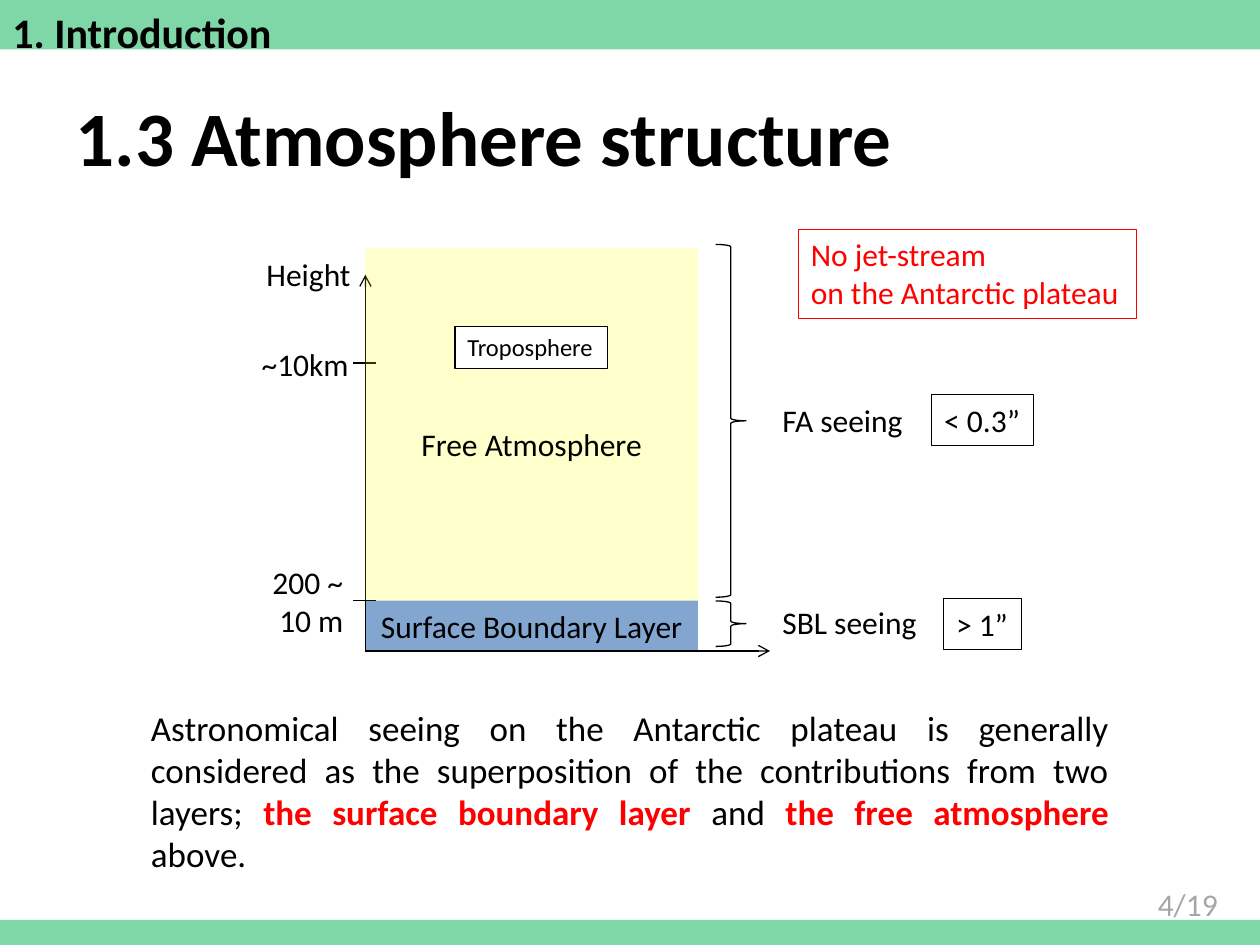
from lxml import etree
from pptx import Presentation
from pptx.dml.color import RGBColor
from pptx.enum import shapes, text
from pptx.oxml import ns
from pptx.util import Pt

COLORS = {"black": "000000", "red": "FF0000", "white": "FFFFFF", "gray": "A6A6A6",
          "green": "00B050", "blue": "4F81BD", "yellow": "FFFF00"}
FONT = "Calibri"
LEFT, CENTER = text.PP_ALIGN.LEFT, text.PP_ALIGN.CENTER
TOP, MIDDLE = text.MSO_ANCHOR.TOP, text.MSO_ANCHOR.MIDDLE


def color(name):
    return RGBColor.from_string(COLORS[name])


def write(shape, content, size=18, fill="black", bold=False, align=LEFT, anchor=TOP, wrap=False):
    frame = shape.text_frame
    frame.word_wrap = wrap
    frame.vertical_anchor = anchor
    for index, line in enumerate(content.split("\n")):
        paragraph = frame.add_paragraph() if index else frame.paragraphs[0]
        paragraph.alignment = align
        for number, part in enumerate(line.split("**")):
            marked = number % 2 == 1
            run = paragraph.add_run()
            run.text = part
            run.font.name = FONT
            run.font.size = Pt(size)
            run.font.bold = bold or marked
            run.font.color.rgb = color("red" if marked else fill)


def add_shape(kind, box, fill=None, line=None, opacity=100):
    shape = slide.shapes.add_shape(kind, *map(Pt, box))
    shape.shadow.inherit = False
    if fill:
        shape.fill.solid()
        shape.fill.fore_color.rgb = color(fill)
        if opacity < 100:
            value = shape.fill._xPr.find(".//" + ns.qn("a:srgbClr"))
            etree.SubElement(value, ns.qn("a:alpha"), val=str(opacity * 1000))
    else:
        shape.fill.background()
    if line:
        shape.line.color.rgb = color(line)
        shape.line.width = Pt(0.75)
    else:
        shape.line.fill.background()
    return shape


presentation = Presentation()
presentation.slide_width, presentation.slide_height = Pt(720), Pt(540)
slide = presentation.slides.add_slide(presentation.slide_layouts[5])
RECTANGLE = shapes.MSO_SHAPE.RECTANGLE

title = slide.shapes.title
title.left, title.top, title.width, title.height = Pt(36), Pt(32.4), Pt(684), Pt(90)
write(title, "1.3 Atmosphere structure", size=44, bold=True, anchor=MIDDLE, wrap=True)

for top, height in ((0, 28.2), (525.6, 14.4)):
    add_shape(RECTANGLE, (0, top, 720, height), "green", opacity=50)

axis_left, ground, layer_top, sky_top, layer_width = 208.8, 372, 343.2, 142, 190
surface_layer = add_shape(RECTANGLE, (axis_left, layer_top, layer_width, ground - layer_top),
                          "blue", opacity=70)
write(surface_layer, "Surface Boundary Layer", align=CENTER, anchor=MIDDLE, wrap=True)

lines = [
    (axis_left, ground, axis_left, 157, True),
    (axis_left, ground, 440, ground, True),
    (215, layer_top, 201.6, layer_top, False),
    (215, 207.5, 201.6, 207.5, False),
]
for *ends, arrow in lines:
    connector = slide.shapes.add_connector(shapes.MSO_CONNECTOR.STRAIGHT, *map(Pt, ends))
    connector.line.color.rgb = color("black")
    connector.line.width = Pt(0.75)
    if arrow:
        etree.SubElement(connector.line._get_or_add_ln(), ns.qn("a:tailEnd"), type="arrow")
    etree.SubElement(connector._element.spPr, ns.qn("a:effectLst"))

free_atmosphere = add_shape(RECTANGLE, (axis_left, sky_top, layer_width, layer_top - sky_top),
                            "yellow", opacity=20)
write(free_atmosphere, "Free Atmosphere", align=CENTER, anchor=MIDDLE, wrap=True)
free_atmosphere.text_frame.margin_top = Pt(25.6)

for top, height in ((139.7, 201.6), (343.4, 26)):
    add_shape(shapes.MSO_SHAPE.RIGHT_BRACE, (409, top, 17.3, height), line="black")

labels = [
    ((0, 0, 164, 36), "1. Introduction", dict(size=24, bold=True)),
    ((654.5, 502, 61.2, 29), "4/19", dict(fill="gray")),
    ((145.2, 142, 63.4, 29), "Height", {}),
    ((142.4, 193.8, 64.8, 29), "~10km", {}),
    ((147.8, 318.2, 56.2, 51), "200 ~\n 10 m", dict(align=CENTER)),
    ((440, 225.6, 84.2, 29), "FA seeing", {}),
    ((440, 340.9, 95.8, 29), "SBL seeing", {}),
    ((79.2, 400.3, 561.6, 80),
     "Astronomical seeing on the Antarctic plateau is generally considered as the "
     "superposition of the contributions from two layers; **the surface boundary layer **"
     "and **the free atmosphere** above.",
     dict(size=20, align=text.PP_ALIGN.JUSTIFY, wrap=True)),
]
for box, content, style in labels:
    write(slide.shapes.add_textbox(*map(Pt, box)), content, **style)

framed_labels = [
    ((260, 186.4, 87, 24.3), "Troposphere", "white", "black", 14),
    ((456.2, 131, 193.4, 51), "No jet-stream\non the Antarctic plateau", None, "red", 18),
    ((532.5, 225.6, 58, 29), "< 0.3”", None, "black", 18),
    ((539.2, 342, 44.6, 29), "> 1”", None, "black", 18),
]
for box, content, fill, ink, size in framed_labels:
    write(add_shape(RECTANGLE, box, fill, ink), content, size=size, fill=ink)

presentation.save("out.pptx")
